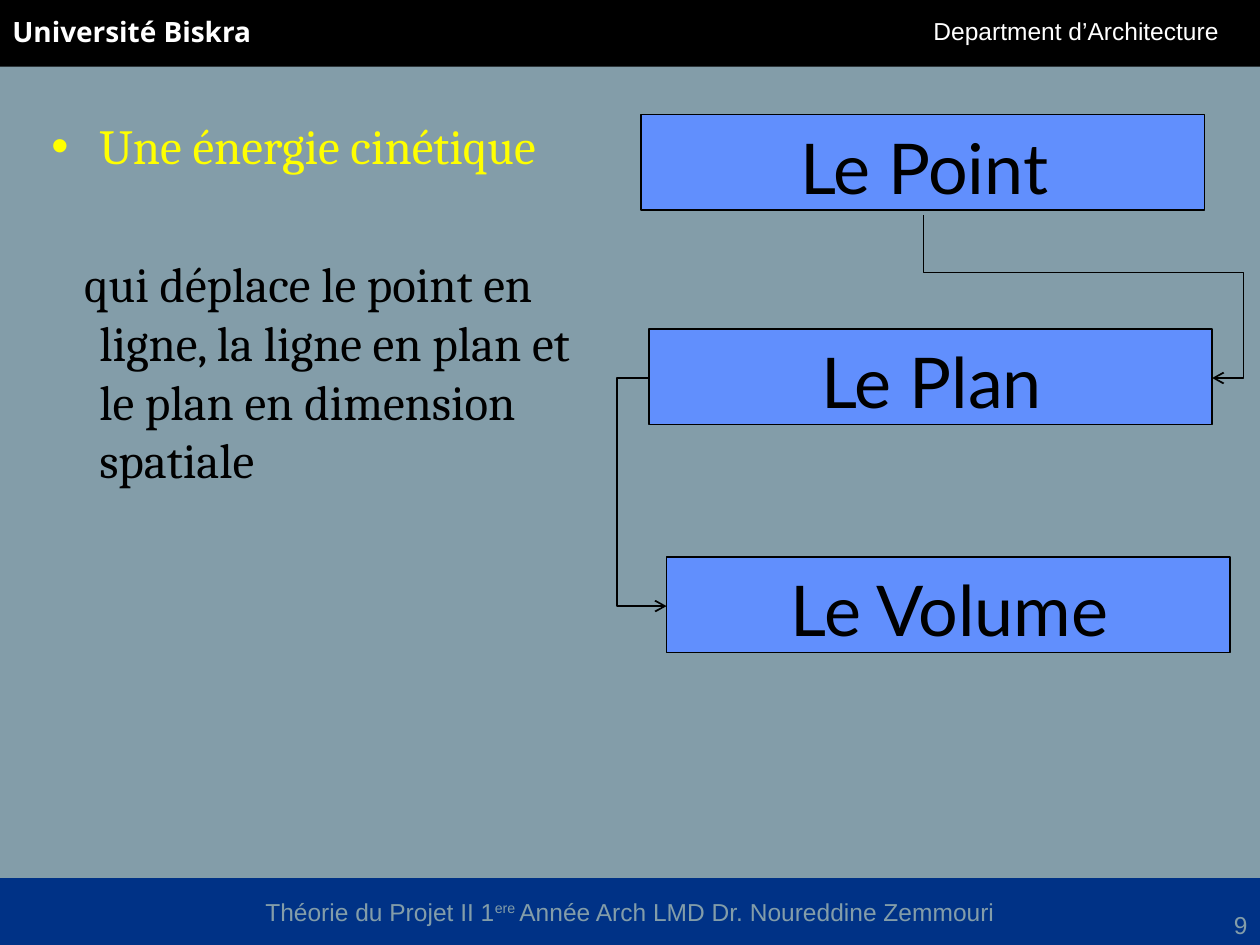
from dataclasses import dataclass

from lxml import etree
from pptx import Presentation
from pptx.dml.color import RGBColor
from pptx.enum import shapes, text
from pptx.oxml import ns
from pptx.util import Inches, Pt

BLACK = RGBColor(0x00, 0x00, 0x00)
WHITE = RGBColor(0xFF, 0xFF, 0xFF)
YELLOW = RGBColor(0xFF, 0xFF, 0x00)
SLATE = RGBColor(0x83, 0x9D, 0xA9)
NAVY = RGBColor(0x00, 0x32, 0x86)
SKY = RGBColor(0x61, 0x8F, 0xFD)
ALIGN = text.PP_ALIGN


@dataclass
class Box:
    left: float
    top: float
    width: float
    height: float

    def emu(self) -> tuple:
        return tuple(Inches(v) for v in (self.left, self.top, self.width, self.height))


@dataclass
class Style:
    size: int
    font: str
    color: RGBColor
    bold: bool = False
    align: ALIGN = ALIGN.LEFT


@dataclass
class Stage:
    label: str
    left: float
    top: float


@dataclass
class Elbow:
    frame: Box
    preset: str
    transform: dict[str, str]
    adjustments: list[int]


STAGES = [
    Stage("Le Point", 5.09, 0.91),
    Stage("Le Plan", 5.15, 2.61),
    Stage("Le Volume", 5.29, 4.42),
]
ELBOWS = [
    Elbow(Box(7.83, 1.21, 1.29, 2.29), "bentConnector4",
          {"rot": "16200000", "flipH": "1"}, [35100, 110900]),
    Elbow(Box(5.15, 3, 0.14, 1.81), "bentConnector3",
          {"rot": "10800000", "flipH": "1", "flipV": "1"}, [-181200]),
]
STAGE_STYLE = Style(40, "Lato", BLACK, align=ALIGN.CENTER)


def apply_style(paragraph, style: Style) -> None:
    paragraph.alignment = style.align
    font = paragraph.font
    font.size, font.name, font.bold = Pt(style.size), style.font, style.bold
    font.color.rgb = style.color


def set_indent(paragraph, margin: float, first_line: float = 0) -> None:
    properties = paragraph._p.get_or_add_pPr()
    properties.set("marL", str(Inches(margin)))
    properties.set("indent", str(Inches(first_line)))


def add_rectangle(parent, box: Box, fill: RGBColor, outlined: bool = False):
    rectangle = parent.add_shape(shapes.MSO_SHAPE.RECTANGLE, *box.emu())
    rectangle.shadow.inherit = False
    rectangle.fill.solid()
    rectangle.fill.fore_color.rgb = fill
    if outlined:
        rectangle.line.color.rgb = BLACK
        rectangle.line.width = Pt(1)
    else:
        rectangle.line.fill.background()
    return rectangle


def add_label(parent, box: Box, wording: str, style: Style):
    frame = parent.add_textbox(*box.emu()).text_frame
    frame.word_wrap = True
    paragraph = frame.paragraphs[0]
    paragraph.text = wording
    apply_style(paragraph, style)
    return frame


def add_stage(parent, stage: Stage) -> None:
    group = parent.add_group_shape().shapes
    add_rectangle(group, Box(stage.left, stage.top, 4.47, 0.76), SKY, outlined=True)
    label_box = Box(stage.left + 0.39, stage.top + 0.03, 3.71, 0.77)
    add_label(group, label_box, stage.label, STAGE_STYLE)


def add_elbow(parent, elbow: Elbow) -> None:
    box = elbow.frame
    connector = parent.add_connector(
        shapes.MSO_CONNECTOR.ELBOW, Inches(box.left), Inches(box.top),
        Inches(box.left + box.width), Inches(box.top + box.height))
    connector.line.color.rgb = BLACK
    connector.line.width = Pt(1)
    properties = connector._element.spPr
    for key, value in elbow.transform.items():
        properties.find(ns.qn("a:xfrm")).set(key, value)
    geometry = properties.find(ns.qn("a:prstGeom"))
    geometry.set("prst", elbow.preset)
    guides = geometry.find(ns.qn("a:avLst"))
    if guides is None:
        guides = etree.SubElement(geometry, ns.qn("a:avLst"))
    for number, value in enumerate(elbow.adjustments, 1):
        etree.SubElement(guides, ns.qn("a:gd"), name=f"adj{number}", fmla=f"val {value}")
    etree.SubElement(properties.find(ns.qn("a:ln")), ns.qn("a:tailEnd"), type="arrow")
    etree.SubElement(properties, ns.qn("a:effectLst"))


def add_footer(parent) -> None:
    bar = add_rectangle(parent, Box(0, 6.97, 10, 0.53), NAVY)
    bar.text_frame.vertical_anchor = text.MSO_ANCHOR.MIDDLE
    bar.text_frame.word_wrap = False
    course = bar.text_frame.paragraphs[0]
    course.add_run().text = "Théorie du Projet II 1"
    ordinal = course.add_run()
    ordinal.text = "ere "
    ordinal._r.get_or_add_rPr().set("baseline", "30000")
    course.add_run().text = "Année Arch LMD Dr. Noureddine Zemmouri"
    apply_style(course, Style(14, "Arial", SLATE, align=ALIGN.CENTER))
    add_label(parent, Box(7.83, 7.17, 2.17, 0.33), "9",
              Style(14, "Arial", SLATE, align=ALIGN.RIGHT))


def add_header(parent) -> None:
    add_rectangle(parent, Box(0, 0, 10, 0.53), BLACK)
    department = add_label(parent, Box(6.67, 0.08, 3.25, 0.33),
                           "Department d’Architecture", Style(14, "Arial", WHITE))
    set_indent(department.paragraphs[0], 0.64)
    add_label(parent, Box(0, 0.07, 2.56, 0.37), "Université Biskra",
              Style(16, "Noto Sans", WHITE, bold=True))


def add_body(parent) -> None:
    body = add_label(parent, Box(0.31, 0.87, 4.42, 4.95), "Une énergie cinétique",
                     Style(28, "Cambria", YELLOW))
    heading = body.paragraphs[0]
    set_indent(heading, 0.38, -0.38)
    bullet_properties = heading._p.get_or_add_pPr()
    bullet_font = etree.Element(ns.qn("a:buFont"), typeface="Arial")
    bullet = etree.Element(ns.qn("a:buChar"), char="•")
    bullet_properties.insert(0, bullet_font)
    bullet_font.addnext(bullet)
    explanation = body.add_paragraph()
    explanation.text = ("qui déplace le point en ligne, la ligne en plan et "
                        "le plan en dimension spatiale")
    apply_style(explanation, Style(28, "Cambria", BLACK))
    explanation.space_before = Pt(45)
    set_indent(explanation, 0.38, -0.12)


def main() -> None:
    deck = Presentation()
    deck.slide_width, deck.slide_height = Inches(10), Inches(7.5)
    slide = deck.slides.add_slide(deck.slide_layouts[6])
    slide.background.fill.solid()
    slide.background.fill.fore_color.rgb = SLATE
    add_header(slide.shapes)
    add_footer(slide.shapes)
    add_body(slide.shapes)
    for stage in STAGES:
        add_stage(slide.shapes, stage)
    for elbow in ELBOWS:
        add_elbow(slide.shapes, elbow)
    deck.save("out.pptx")


if __name__ == "__main__":
    main()
